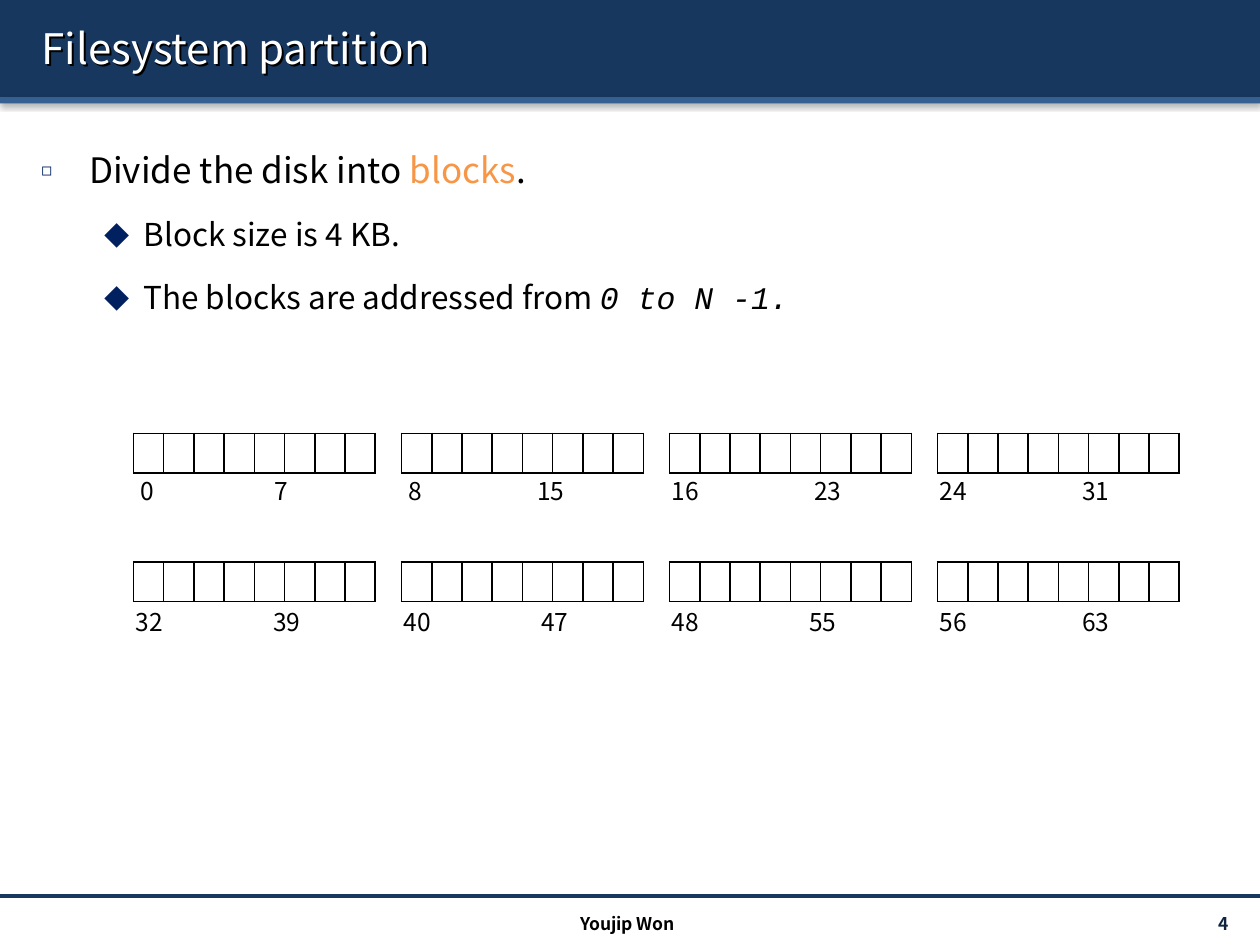
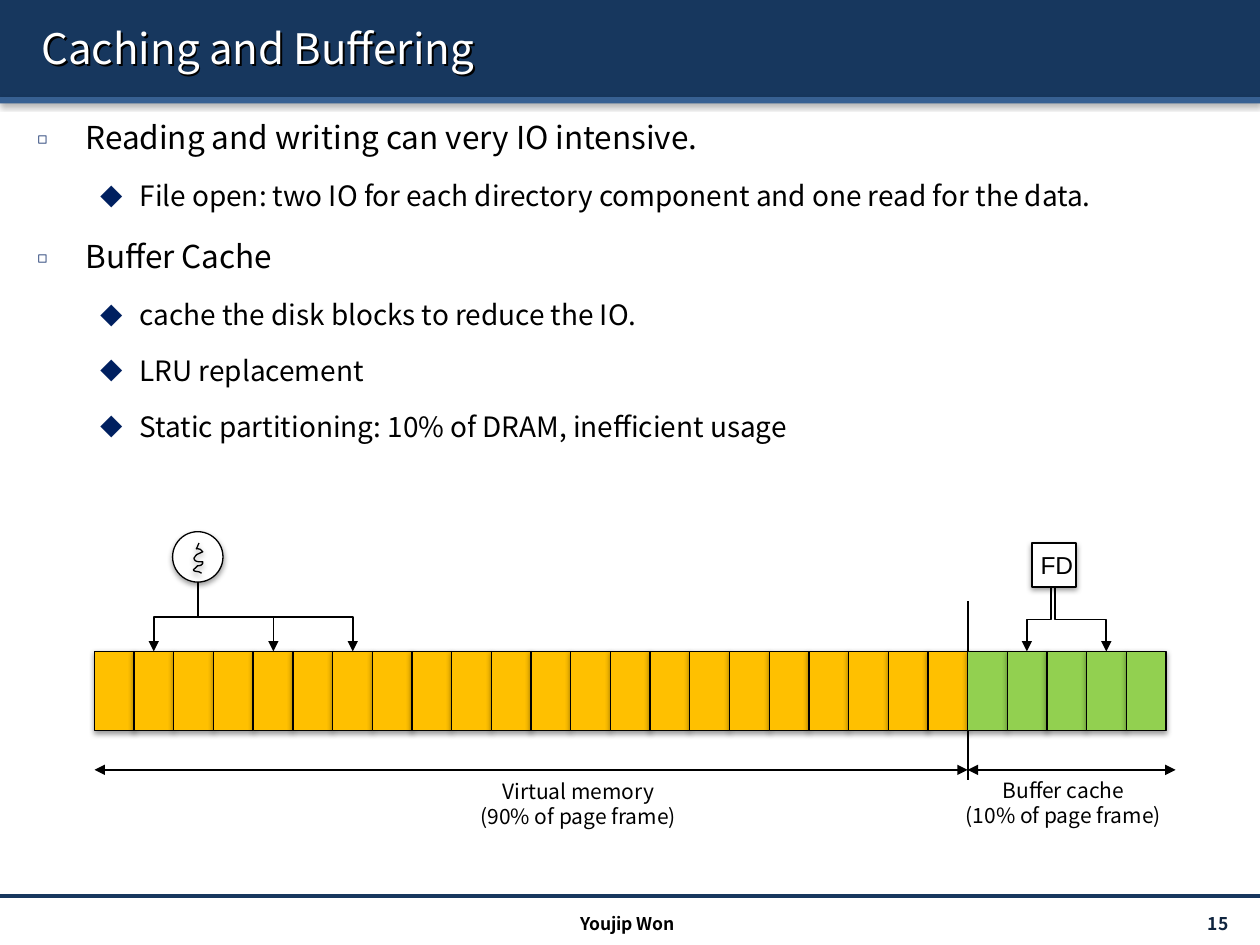
from lxml import etree
from pptx import Presentation, util as u
from pptx.dml.color import RGBColor
from pptx.enum import shapes, text
from pptx.oxml import ns

# Shared style
FONT, CODE_FONT = "Noto Sans CJK KR", "Courier New"
NAVY, STEEL, BULLET, NUMBER = "17375E", "376092", "002060", "0F243E"
BLACK, WHITE, ORANGE = "000000", "FFFFFF", "F79646"
AMBER, GREEN = "FFC000", "92D050"
COLUMNS, ROWS = 100, 75  # square grid over the slide
LEFT, CENTER, RIGHT = text.PP_ALIGN.LEFT, text.PP_ALIGN.CENTER, text.PP_ALIGN.RIGHT
RECTANGLE, OVAL = shapes.MSO_SHAPE.RECTANGLE, shapes.MSO_SHAPE.OVAL
STRAIGHT, ELBOW = shapes.MSO_CONNECTOR.STRAIGHT, shapes.MSO_CONNECTOR.ELBOW

# Bullet per level: left margin, hanging indent, character, size in percent
BULLETS = [(3.8, -3.8, "◻", 50), (8.1, -3.1, "◆", 80)]


def color(value):
    return RGBColor.from_string(value)


def add_xml(parent, tag, **attributes):
    """Append a drawing element and return it."""
    return etree.SubElement(parent, ns.qn(f"a:{tag}"),
                            {name: str(value) for name, value in attributes.items()})


def add_shadow(item, blur=40000, distance=20000, direction=5400000, alpha=38000):
    item.shadow.inherit = False
    effects = item.element.spPr.find(ns.qn("a:effectLst"))
    shadow = add_xml(effects, "outerShdw", blurRad=blur, dist=distance,
                     dir=direction, rotWithShape=0)
    add_xml(add_xml(shadow, "srgbClr", val=BLACK), "alpha", val=alpha)


def curve_points(controls, steps=4):
    """Sample a chain of cubic curves; neighbours share an end point."""
    points = [controls[0]]
    for start in range(0, len(controls) - 1, 3):
        a, b, c, d = controls[start:start + 4]
        for step in range(1, steps + 1):
            t = step / steps
            weights = ((1 - t) ** 3, 3 * t * (1 - t) ** 2, 3 * t * t * (1 - t), t ** 3)
            points.append(tuple(sum(w * p[axis] for w, p in zip(weights, (a, b, c, d)))
                                for axis in (0, 1)))
    return points


class Painter:
    """Holds the deck, the grid and the current page."""

    def __init__(self):
        self.deck = Presentation()
        self.deck.slide_width, self.deck.slide_height = u.Inches(10), u.Inches(7.5)
        self.page = None

    def x(self, columns):
        return round(self.deck.slide_width * columns / COLUMNS)

    def y(self, rows):
        return round(self.deck.slide_height * rows / ROWS)

    def area(self, left, top, width, height):
        return self.x(left), self.y(top), self.x(width), self.y(height)

    def style(self, span, size, ink=BLACK, font=FONT, bold=False, italic=False):
        span.font.size, span.font.name = u.Pt(size), font
        span.font.bold, span.font.italic = bold, italic
        span.font.color.rgb = color(ink)

    def new_page(self, title, number):
        self.page = self.deck.slides.add_slide(self.deck.slide_layouts[5])
        # Bands and footer
        self.shape(RECTANGLE, (0, 0, 100, 7.7), NAVY, line=None)
        self.shape(RECTANGLE, (0, 7.7, 100, 0.5), STEEL, line=None)
        self.connector((0, 71.1), (100, 71.1), ink=NAVY, weight=2)
        self.label((87.1, 72.1, 11.7, 2.4), f"{number} ", 10, RIGHT,
                   text.MSO_ANCHOR.MIDDLE, ink=NUMBER, bold=True)
        self.label((33.2, 72, 33.2, 2.4), "Youjip Won", 10, CENTER, bold=True)
        # Title, raised above the band; without a fill its text casts the shadow
        box = self.page.shapes.title
        box.element.getparent().append(box.element)
        box.left, box.top, box.width, box.height = self.area(2.3, 0.6, 96.1, 6.4)
        frame = box.text_frame
        frame.text = title
        frame.vertical_anchor = text.MSO_ANCHOR.MIDDLE
        frame.auto_size = text.MSO_AUTO_SIZE.NONE
        para = frame.paragraphs[0]
        para.alignment = LEFT
        self.style(para.runs[0], 24, WHITE)
        box.fill.background()
        add_shadow(box, 0, 20000, 2700000, 100000)

    def shape(self, kind, area, fill, line=BLACK):
        item = self.page.shapes.add_shape(kind, *self.area(*area))
        item.fill.solid()
        item.fill.fore_color.rgb = color(fill)
        self.finish(item, line)

    def finish(self, item, line):
        """Outline and soft shadow of a shape."""
        if line:
            item.line.color.rgb, item.line.width = color(line), u.Pt(0.75)
        else:
            item.line.fill.background()
        add_shadow(item)

    def curve(self, controls):
        points = [(self.x(a), self.y(b)) for a, b in curve_points(controls)]
        builder = self.page.shapes.build_freeform(*points[0])
        builder.add_line_segments(points[1:], close=False)
        item = builder.convert_to_shape()
        item.fill.background()
        self.finish(item, BLACK)

    def connector(self, start, end, kind=STRAIGHT, ink=BLACK, weight=1, arrows=()):
        item = self.page.shapes.add_connector(
            kind, self.x(start[0]), self.y(start[1]), self.x(end[0]), self.y(end[1]))
        item.line.color.rgb, item.line.width = color(ink), u.Pt(weight)
        outline = item.element.spPr.find(ns.qn("a:ln"))
        for arrow in arrows:
            add_xml(outline, arrow, type="triangle")
        add_xml(item.element.spPr, "effectLst")
        return item

    def drop_arrow(self, start, end):
        """Elbow arrow that leaves downward: a turned horizontal elbow."""
        across, down = end[0] - start[0], end[1] - start[1]
        middle_x, middle_y = (start[0] + end[0]) / 2, (start[1] + end[1]) / 2
        half_x, half_y = down / 2, abs(across) / 2
        item = self.connector((middle_x - half_x, middle_y - half_y),
                              (middle_x + half_x, middle_y + half_y),
                              ELBOW, arrows=["tailEnd"])
        frame = item.element.spPr.find(ns.qn("a:xfrm"))
        frame.set("rot", str((270 if across > 0 else 90) * 60000))
        if across > 0:
            frame.set("flipH", "1")

    def text_box(self, area, anchor=text.MSO_ANCHOR.TOP):
        frame = self.page.shapes.add_textbox(*self.area(*area)).text_frame
        frame.word_wrap, frame.vertical_anchor = True, anchor
        return frame

    def label(self, area, words, size, align=LEFT, anchor=text.MSO_ANCHOR.TOP,
              tab=None, **look):
        frame = self.text_box(area, anchor)
        frame.text = words
        for para in frame.paragraphs:
            para.alignment = align
            if tab:
                stops = add_xml(para._p.get_or_add_pPr(), "tabLst")
                add_xml(stops, "tab", pos=self.x(tab), algn="l")
            for span in para.runs:
                self.style(span, size, **look)

    def bullets(self, area, sizes, items):
        """Items are (level, spans); a span is (words, look)."""
        frame = self.text_box(area)
        for index, (level, spans) in enumerate(items):
            para = frame.add_paragraph() if index else frame.paragraphs[0]
            margin, indent, mark, percent = BULLETS[level]
            para.level = level
            layout = para._p.get_or_add_pPr()
            layout.set("marL", str(self.x(margin)))
            layout.set("indent", str(self.x(indent)))
            add_xml(add_xml(layout, "buClr"), "srgbClr", val=BULLET)
            add_xml(layout, "buSzPct", val=percent * 1000)
            add_xml(layout, "buFont", typeface=FONT)
            add_xml(layout, "buChar", char=mark)
            para.line_spacing = 1.5
            if index:
                para.space_before = u.Pt(sizes[level] * 0.2)
            for words, look in spans:
                span = para.add_run()
                span.text = words
                self.style(span, sizes[level], **look)

    def block_row(self, left, top, count, width, height):
        """One-row table of empty bordered cells."""
        table = self.page.shapes.add_table(
            1, count, *self.area(left, top, width * count, height)).table
        for column in table.columns:
            column.width = self.x(width)
        for cell in table.iter_cells():
            cell.margin_left = cell.margin_right = cell.margin_top = cell.margin_bottom = 0
            borders = cell._tc.get_or_add_tcPr()
            for side in ("lnL", "lnR", "lnT", "lnB"):
                border = add_xml(borders, side, w=u.Pt(1))
                add_xml(add_xml(border, "solidFill"), "srgbClr", val=BLACK)
            cell.fill.solid()
            cell.fill.fore_color.rgb = color(WHITE)


def partition_page(painter):
    painter.new_page("Filesystem partition", 4)
    painter.bullets((2.3, 9.6, 96.1, 60.2), (20, 18), [
        (0, [("Divide the disk into ", {}), ("blocks", {"ink": ORANGE}), (".", {})]),
        (1, [("Block size is 4 KB.", {})]),
        (1, [("The blocks are addressed from ", {}),
             ("0 to N -1.", {"font": CODE_FONT, "italic": True})]),
    ])
    # Eight groups of eight blocks, with first and last address below
    tabs = [10.6, 10.2, 11.3, 11.3, 10.9, 10.9, 10.9, 11.3]
    groups = [(10.6 + 21.27 * (group % 4), group // 4) for group in range(8)]
    for left, row in groups:
        painter.block_row(left, 34.4 + 10.2 * row, 8, 2.4, 3.15)
    for group, (left, row) in enumerate(groups):
        first = group * 8
        outdent = 0.4 if first < 10 else 0.8
        painter.label((left - outdent, 37.3 + 10.4 * row, 20.3, 3.4),
                      f"{first}\t{first + 7}", 14, tab=tabs[group])


def caching_page(painter):
    painter.new_page("Caching and Buffering", 15)
    lines = [
        (0, "Reading and writing can very IO intensive."),
        (1, "File open: two IO for each directory component and one read for the data."),
        (0, "Buffer Cache"),
        (1, "cache the disk blocks to reduce the IO."),
        (1, "LRU replacement"),
        (1, "Static partitioning: 10% of DRAM, inefficient usage"),
    ]
    painter.bullets((2, 7.4, 96.1, 60.2), (18, 16),
                    [(level, [(words, {})]) for level, words in lines])

    # Page frames: virtual memory, then buffer cache
    left, top, step, memory_frames, cache_frames = 7.5, 51.7, 3.15, 22, 5
    split = left + step * memory_frames
    painter.connector((split, 47.7), (split, 61.9))
    for start, end in ((left, split), (split, 93.3)):
        painter.connector((start, 61.1), (end, 61.1), arrows=["headEnd", "tailEnd"])
    painter.label((33.1, 61.3, 25.6, 5), "Virtual memory\n(90% of page frame)", 12, CENTER)
    painter.label((71, 61.2, 26.8, 5), "Buffer cache\n(10% of page frame)", 12, CENTER)
    for index in range(memory_frames + cache_frames):
        painter.shape(RECTANGLE, (left + step * index, top, step, 6.3),
                      AMBER if index < memory_frames else GREEN)

    # Thread and the frames it uses
    painter.shape(OVAL, (13.7, 42.2, 4, 4), WHITE)
    for target in (12.2, 21.7, 28):
        painter.drop_arrow((15.7, 46.2), (target, top))
    painter.curve([(15.8, 43.1), (15.5, 43.9), (15.5, 43.4), (15.9, 43.6),
                   (16, 43.7), (16, 43.7), (16.1, 43.8),
                   (15.5, 44.1), (15.7, 43.9), (15.4, 44.3),
                   (15.4, 44.3), (15.4, 44.4), (15.5, 44.5),
                   (15.6, 44.6), (15.9, 44.6), (16.1, 44.6),
                   (16.1, 44.7), (16.1, 44.8), (16, 44.8),
                   (16, 44.9), (15.8, 44.9), (15.7, 44.9),
                   (15.6, 45), (15.6, 45), (15.5, 45.1),
                   (15.4, 45.2), (15.3, 45.2), (15.4, 45.3),
                   (15.5, 45.4), (15.8, 45.3), (16, 45.5)])

    # File descriptor and its cached frames
    painter.shape(RECTANGLE, (81.9, 43.1, 3.5, 3.5), WHITE)
    for source, target in ((83.4, 81.5), (83.7, 87.8)):
        painter.drop_arrow((source, 46.65), (target, top))
    painter.label((81.6, 43.2, 5.1, 3.4), "FD", 14, font="Arial")


def main():
    painter = Painter()
    partition_page(painter)
    caching_page(painter)
    painter.deck.save("out.pptx")


if __name__ == "__main__":
    main()
